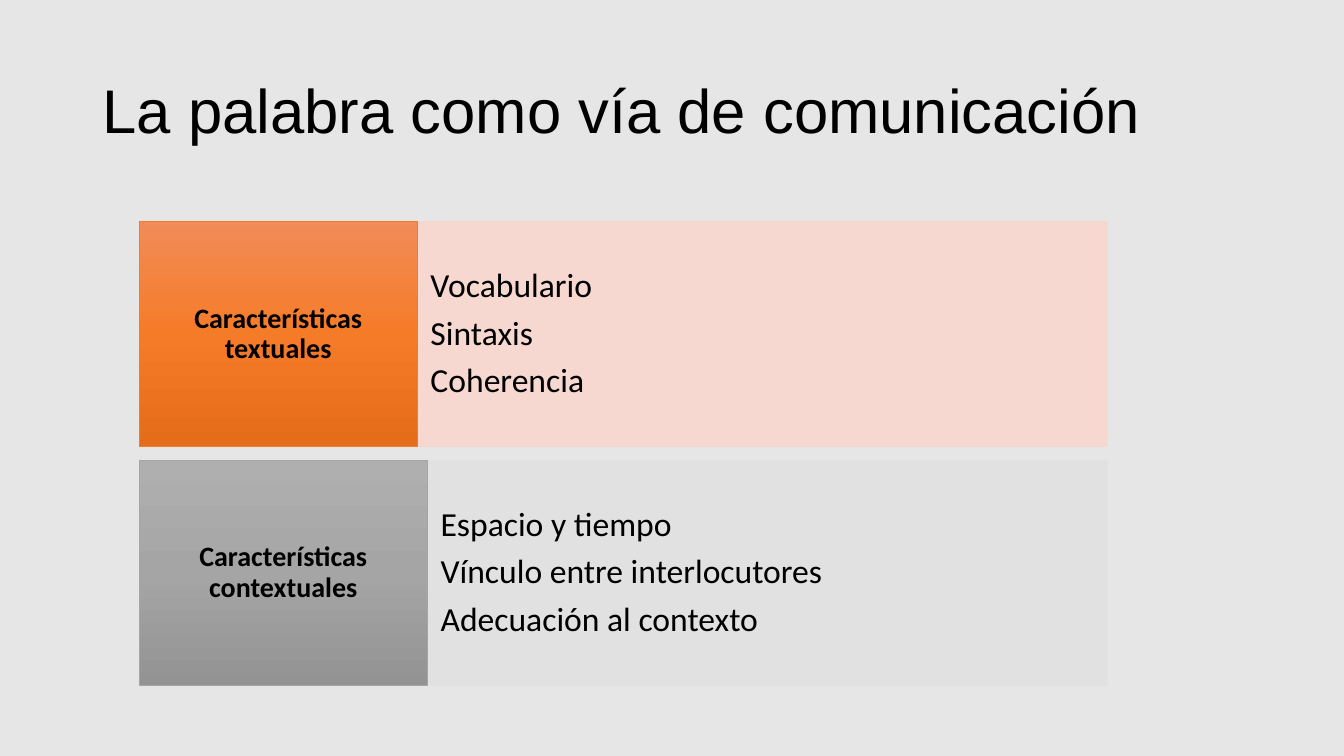
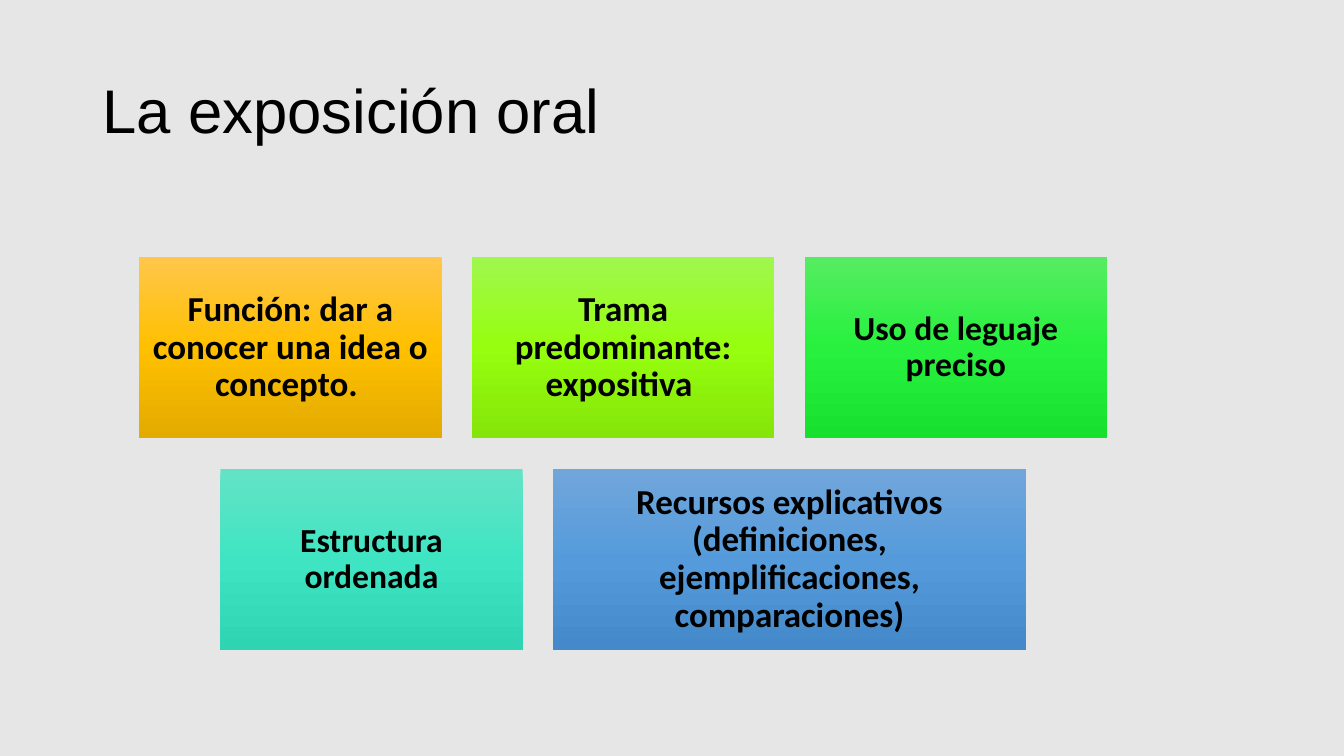
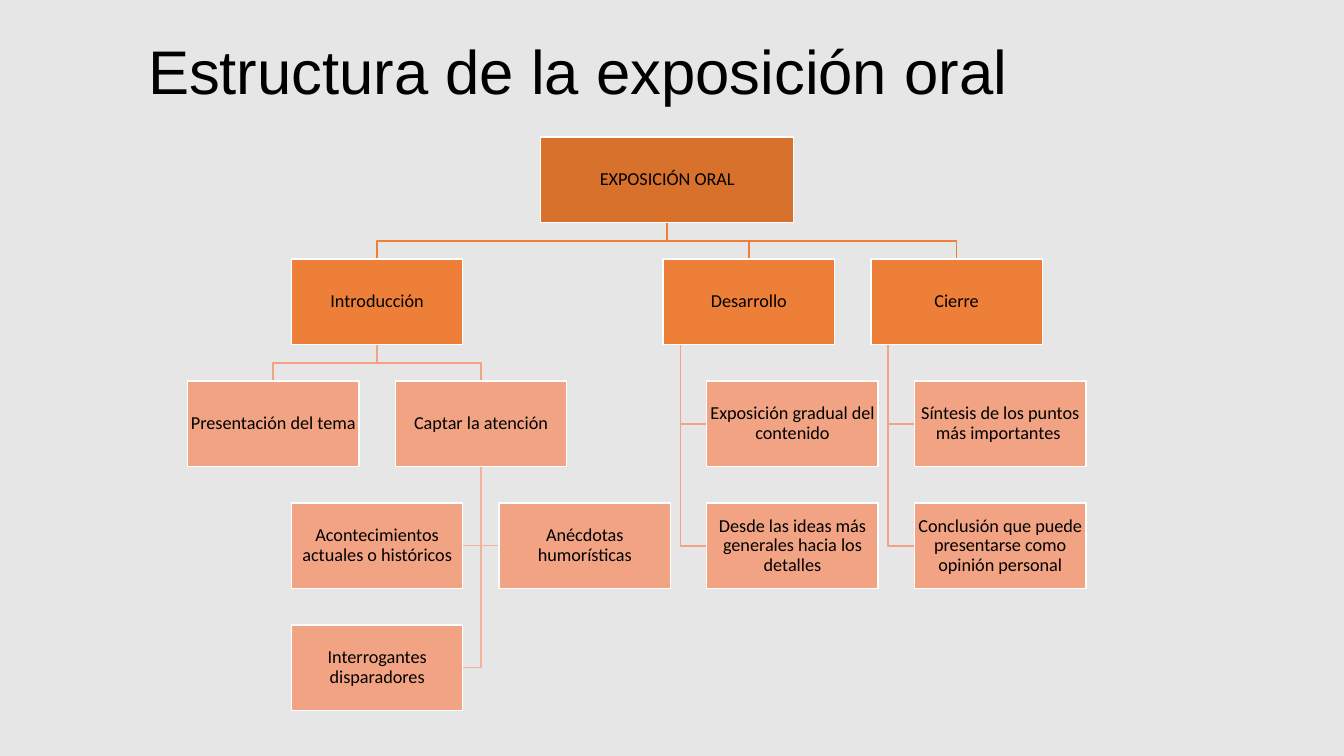
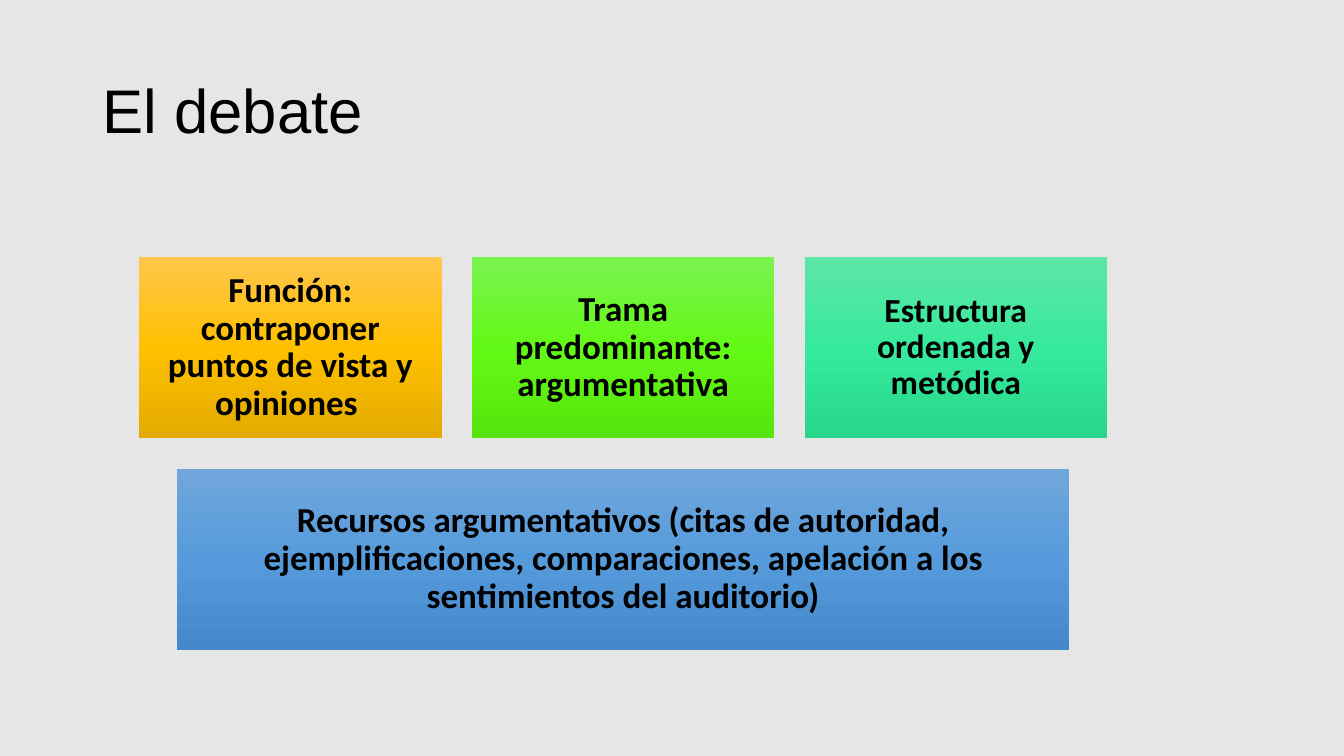
import copy

import lxml.etree
import pptx
import pptx.dml.color
import pptx.enum.shapes
import pptx.enum.text
import pptx.oxml.ns
import pptx.util

COLORS = {
    "background": "E7E6E6", "text": "000000", "white": "FFFFFF",
    "orange": "ED7D31", "orange_fade": "F18C57 F67B28 E56C19", "orange_pale": "F8D7CE",
    "gray": "A5A5A5", "gray_fade": "AFAFAF A5A5A5 939393", "gray_pale": "E1E1E1",
    "gold": "FFC64B FFC000 E3AB00", "lime": "A0F74E 96FE0E 85E509",
    "green": "56EC62 27F13E 18E02F", "grass": "7AF350 63F916 56E50C",
    "turquoise": "63E3C6 3FE5C3 2FD4B2", "mint": "5EE6A6 37E99C 27D88C",
    "blue": "71A6DB 559BDB 448ACA",
    "root": "D7712C", "branch": "ED7F39", "leaf": "F1A383", "twig": "F3B29A",
}
RGB = pptx.dml.color.RGBColor.from_string
IN = pptx.util.Inches
LEFT = pptx.enum.text.PP_ALIGN.LEFT
CENTER = pptx.enum.text.PP_ALIGN.CENTER


def write(sp, lines, size, font="Calibri", bold=False, align=CENTER, inset=(0.1, 0.05)):
    tf = sp.text_frame
    tf.word_wrap = True
    tf.vertical_anchor = pptx.enum.text.MSO_ANCHOR.MIDDLE
    tf.margin_left = tf.margin_right = IN(inset[0])
    tf.margin_top = tf.margin_bottom = IN(inset[1])
    tf.text = "\n".join(lines)
    for p in tf.paragraphs:
        p.alignment = align
        p.line_spacing = 0.9
        p.space_after = pptx.util.Pt(round(size * 0.35))
        p.font.size = pptx.util.Pt(size)
        p.font.name = font
        p.font.bold = bold
        p.font.color.rgb = RGB(COLORS["text"])


def box(s, x, y, w, h, fill, line=None, weight=0.5):
    sp = s.shapes.add_shape(pptx.enum.shapes.MSO_SHAPE.RECTANGLE, IN(x), IN(y), IN(w), IN(h))
    sp.shadow.inherit = False
    stops = COLORS[fill].split()
    if len(stops) == 1:
        sp.fill.solid()
        sp.fill.fore_color.rgb = RGB(stops[0])
    else:
        sp.fill.gradient()
        sp.fill.gradient_angle = 270
        gs = sp._element.spPr.find(".//" + pptx.oxml.ns.qn("a:gsLst"))
        gs.insert(1, copy.deepcopy(gs[0]))
        for i, stop in enumerate(sp.fill.gradient_stops):
            stop.position = i / 2
            stop.color.rgb = RGB(stops[i])
    if line:
        sp.line.color.rgb = RGB(COLORS[line])
        sp.line.width = pptx.util.Pt(weight)
    else:
        sp.line.fill.background()
    return sp


prs = pptx.Presentation()
prs.slide_width, prs.slide_height = IN(13.33), IN(7.5)
master_fill = prs.slide_master.background.fill
master_fill.solid()
master_fill.fore_color.rgb = RGB(COLORS["background"])

TITLE = (0.92, 0.4, 11.5, 1.45)
titles = [
    ("La palabra como vía de comunicación", TITLE),
    ("La exposición oral", TITLE),
    ("Estructura de la exposición oral", (1.37, 0.29, 10.6, 0.9)),
    ("El debate", TITLE),
]
slides = []
for title, area in titles:
    s = prs.slides.add_slide(prs.slide_layouts[6])
    write(s.shapes.add_textbox(*map(IN, area)), [title], 44, font="Arial", align=LEFT)
    slides.append(s)
word_slide, talk_slide, tree_slide, debate_slide = slides

BODY_LEFT, BODY_W = 1.38, 9.6

bands = [
    ("Características textuales", 2.76, "orange",
     ["Vocabulario", "Sintaxis", "Coherencia"]),
    ("Características contextuales", 2.86, "gray",
     ["Espacio y tiempo", "Vínculo entre interlocutores", "Adecuación al contexto"]),
]
for row, (label, label_w, color, items) in enumerate(bands):
    y = 2.2 + row * 2.37
    pale = color + "_pale"
    sp = box(word_slide, BODY_LEFT + label_w, y, BODY_W - label_w, 2.23, pale, pale)
    for clr in sp._element.spPr.iter(pptx.oxml.ns.qn("a:srgbClr")):
        lxml.etree.SubElement(clr, pptx.oxml.ns.qn("a:alpha"), val="90000")
    write(sp, items, 24, align=LEFT, inset=(0.13, 0.1))
    sp = box(word_slide, BODY_LEFT, y, label_w, 2.23, color + "_fade", color)
    write(sp, [label], 20, bold=True, inset=(0.09, 0.22))

CARD_W, CARD_H, CARD_GAP = 3, 1.8, 0.3
card_rows = [
    (talk_slide, 0, [
        ("Función: dar a conocer una idea o concepto. ", CARD_W, "gold", 25),
        ("Trama predominante: expositiva ", CARD_W, "lime", 25),
        ("Uso de leguaje preciso", CARD_W, "green", 24)]),
    (talk_slide, 1, [
        ("Estructura ordenada", CARD_W, "turquoise", 24),
        ("Recursos explicativos (definiciones, ejemplificaciones, comparaciones)",
         4.69, "blue", 25)]),
    (debate_slide, 0, [
        ("Función: contraponer puntos de vista y opiniones ", CARD_W, "gold", 25),
        ("Trama predominante: argumentativa", CARD_W, "grass", 25),
        ("Estructura ordenada y metódica", CARD_W, "mint", 24)]),
    (debate_slide, 1, [
        ("Recursos argumentativos (citas de autoridad, ejemplificaciones, comparaciones, "
         "apelación a los sentimientos del auditorio)", 8.85, "blue", 25)]),
]
for s, row, cards in card_rows:
    row_w = sum(card[1] for card in cards) + CARD_GAP * (len(cards) - 1)
    x = BODY_LEFT + (BODY_W - row_w) / 2
    for text, w, color, size in cards:
        sp = box(s, x, 2.55 + row * (CARD_H + CARD_GAP), w, CARD_H, color)
        write(sp, [text], size, bold=True, inset=(0.1, 0.1))
        x += w + CARD_GAP

NODE_W, NODE_H, COL, ROW = 1.7, 0.85, 2.06, 1.21
nodes = [
    ("EXPOSICIÓN ORAL", 1.7, 0, None, None),
    ("Introducción", 0.5, 1, 0, None),
    ("Desarrollo", 2.29, 1, 0, None),
    ("Cierre", 3.29, 1, 0, None),
    ("Presentación del tema", 0, 2, 1, None),
    ("Captar la atención", 1, 2, 1, None),
    ("Acontecimientos actuales o históricos", 0.5, 3, 5, 0.5),
    ("Anécdotas humorísticas", 1.5, 3, 5, 0.5),
    ("Interrogantes disparadores", 0.5, 4, 5, 0.5),
    ("Exposición gradual del contenido", 2.5, 2, 2, 0.1),
    ("Desde las ideas más generales hacia los detalles", 2.5, 3, 2, 0.1),
    ("Síntesis de los puntos más importantes ", 3.5, 2, 3, 0.1),
    ("Conclusión que puede presentarse como opinión personal", 3.5, 3, 3, 0.1),
]
areas = [(1.86 + col * COL, 1.36 + row * ROW, NODE_W if row else 2.51)
         for text, col, row, parent, trunk in nodes]

for (text, col, row, parent, trunk), (x, y, w) in zip(nodes, areas):
    if parent is None:
        continue
    px, py, pw = areas[parent]
    bottom = py + NODE_H
    if trunk is None:
        start, end, mid = px + pw / 2, x + w / 2, (bottom + y) / 2
        points = [(start, bottom), (start, mid), (end, mid), (end, y)]
    else:
        start, level = px + pw * trunk, y + NODE_H / 2
        points = [(start, bottom), (start, level), (x if x > start else x + w, level)]
    points = [(IN(a), IN(b)) for a, b in points]
    fb = tree_slide.shapes.build_freeform(*points[0])
    fb.add_line_segments(points[1:], close=False)
    sp = fb.convert_to_shape()
    sp.shadow.inherit = False
    sp.fill.background()
    color = "branch" if parent == 0 else "twig" if parent == 5 else "leaf"
    sp.line.color.rgb = RGB(COLORS[color])
    sp.line.width = pptx.util.Pt(1)

for (text, col, row, parent, trunk), (x, y, w) in zip(nodes, areas):
    color = ("root", "branch", "leaf")[min(row, 2)]
    sp = box(tree_slide, x, y, w, NODE_H, color, "white", 1)
    write(sp, [text], 13, inset=(0.01, 0.01))

prs.save("out.pptx")
